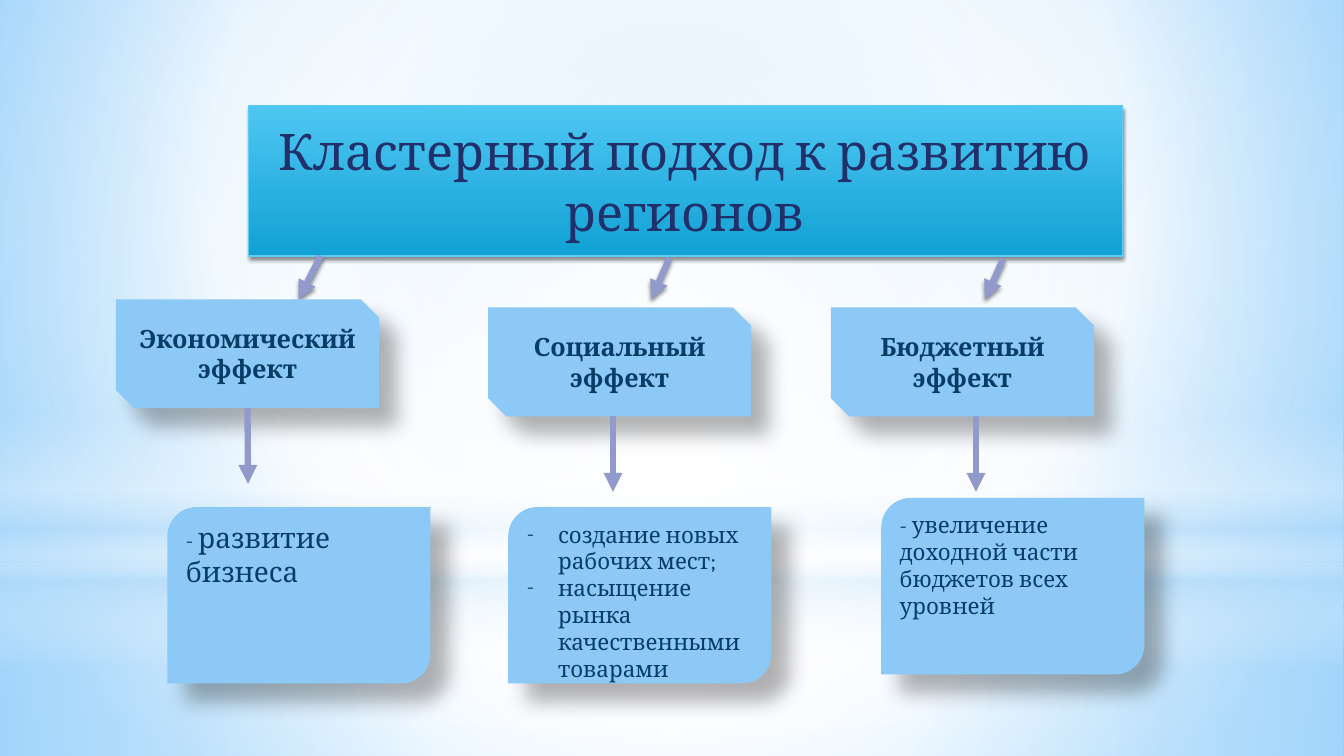
import pptx
import pptx.util
import pptx.dml.color
import pptx.enum.shapes
import pptx.enum.text
import pptx.oxml
import pptx.oxml.ns

Inches = pptx.util.Inches
Pt = pptx.util.Pt
Color = pptx.dml.color.RGBColor
Preset = pptx.enum.shapes.MSO_SHAPE
Align = pptx.enum.text.PP_ALIGN
Anchor = pptx.enum.text.MSO_ANCHOR

NAVY = Color(0x21, 0x30, 0x6A)
INK = Color(0x07, 0x3C, 0x65)
CARD = Color(0x8C, 0xC9, 0xF7)
ARROW = Color(0x91, 0x9A, 0xCA)
EDGE = Color(0x5E, 0xCC, 0xF3)
WHITE = Color(0xFF, 0xFF, 0xFF)
MIST = Color(0xB4, 0xDC, 0xFA)
SKY = Color(0x9E, 0xD5, 0xFF)
AZURE = Color(0x5B, 0xB9, 0xFF)
BANNER_TOP = Color(0x4E, 0xC7, 0xF2)
BANNER_BOTTOM = Color(0x11, 0xA1, 0xD4)

SOFT_SHADOW = (30, 15, 18, 45)
TIGHT_SHADOW = (45, 3.1, 1.8, 90)
CENTER = (50, 50, 50, 50)


def element(markup):
    head, rest = markup.split(" ", 1)
    return pptx.oxml.parse_xml(f"{head} {pptx.oxml.ns.nsdecls('a')} {rest}")


def gradient(stops, focus=None):
    marks = "".join(
        f'<a:gs pos="{place * 1000}"><a:srgbClr val="{color}">'
        f'<a:alpha val="{alpha * 1000}"/></a:srgbClr></a:gs>'
        for place, color, alpha in stops)
    course = '<a:lin ang="5400000" scaled="0"/>'
    if focus:
        sides = " ".join(f'{side}="{share * 1000}"' for side, share in zip("ltrb", focus))
        course = f'<a:path path="circle"><a:fillToRect {sides}/></a:path>'
    return element(f'<a:gradFill rotWithShape="1"><a:gsLst>{marks}</a:gsLst>{course}</a:gradFill>')


def write(para, text, size=16, color=INK, bold=False, font="Cambria"):
    span = para.add_run()
    span.text = text
    span.font.size = Pt(size)
    span.font.name = font
    span.font.bold = bold
    span.font.color.rgb = color


class Board:
    def __init__(self, deck):
        self.page = deck.slides.add_slide(deck.slide_layouts[1])

    def backdrop(self, stops, focus):
        self.page.background.fill.solid()
        solid = self.page.element.xpath("./p:cSld/p:bg/p:bgPr/a:solidFill")[0]
        solid.getparent().replace(solid, gradient(stops, focus))

    def shade(self, box, stops, focus=None):
        box.fill.background()
        blank = box.element.spPr.find(pptx.oxml.ns.qn("a:noFill"))
        box.element.spPr.replace(blank, gradient(stops, focus))

    def shadow(self, item, strength, blur, distance, angle):
        effects = element('<a:effectLst >'
                          f'<a:outerShdw blurRad="{Pt(blur)}" dist="{Pt(distance)}" '
                          f'dir="{angle * 60000}" algn="ctr" rotWithShape="0">'
                          f'<a:srgbClr val="000000"><a:alpha val="{strength * 1000}"/>'
                          '</a:srgbClr></a:outerShdw></a:effectLst>')
        for old in item.element.spPr.findall(pptx.oxml.ns.qn("a:effectLst")):
            item.element.spPr.remove(old)
        item.element.spPr.append(effects)

    def shape(self, preset, frame):
        box = self.page.shapes.add_shape(preset, *map(Inches, frame))
        box.shadow.inherit = False
        box.line.fill.background()
        return box

    def placeholder(self, index, outline, frame):
        box = self.page.placeholders[index]
        box.left, box.top, box.width, box.height = map(Inches, frame)
        box.element.spPr.append(element(f'<a:prstGeom prst="{outline}"><a:avLst/></a:prstGeom>'))
        box.element.getparent().append(box.element)
        box.text_frame.auto_size = pptx.enum.text.MSO_AUTO_SIZE.NONE
        return box

    def glow(self, preset, frame, stops, focus=None):
        self.shade(self.shape(preset, frame), stops, focus)

    def banner(self, frame, text):
        box = self.placeholder(0, "roundRect", frame)
        self.shade(box, [(0, BANNER_TOP, 100), (100, BANNER_BOTTOM, 100)])
        box.line.color.rgb = EDGE
        box.line.width = Pt(0.75)
        self.shadow(box, *TIGHT_SHADOW)
        box.text_frame.vertical_anchor = Anchor.MIDDLE
        para = box.text_frame.paragraphs[0]
        para.alignment = Align.CENTER
        write(para, text, size=36, color=NAVY)

    def card(self, box, anchor):
        box.fill.solid()
        box.fill.fore_color.rgb = CARD
        box.line.fill.background()
        self.shadow(box, *SOFT_SHADOW)
        box.text_frame.word_wrap = True
        box.text_frame.vertical_anchor = anchor

    def effect(self, frame, text):
        box = self.shape(Preset.SNIP_2_DIAG_RECTANGLE, frame)
        self.card(box, Anchor.MIDDLE)
        para = box.text_frame.paragraphs[0]
        para.alignment = Align.CENTER
        write(para, text, size=18, bold=True)
        return box

    def result(self, frame, spans):
        box = self.shape(Preset.ROUND_2_DIAG_RECTANGLE, frame)
        self.card(box, Anchor.TOP)
        para = box.text_frame.paragraphs[0]
        para.alignment = Align.LEFT
        for text, size in spans:
            write(para, text, size=size)

    def result_list(self, frame, items):
        box = self.placeholder(1, "round2DiagRect", frame)
        self.card(box, Anchor.TOP)
        for number, text in enumerate(items):
            para = box.text_frame.add_paragraph() if number else box.text_frame.paragraphs[0]
            para.space_before = Pt(0)
            write(para, text)
            layout = para._p.get_or_add_pPr()
            layout.set("marL", str(Inches(0.31)))
            layout.set("indent", str(-Inches(0.31)))
            layout.append(element('<a:buFont typeface="Cambria"/>'))
            layout.append(element('<a:buChar char="-"/>'))

    def arrow(self, start, end, shadow=None, source=None):
        line = self.page.shapes.add_connector(
            pptx.enum.shapes.MSO_CONNECTOR.STRAIGHT, *map(Inches, start + end))
        if source:
            line.begin_connect(source, 2)
        line.line.color.rgb = ARROW
        line.line.width = Pt(4.5)
        line.line._get_or_add_ln().append(element('<a:tailEnd type="triangle"/>'))
        if shadow:
            self.shadow(line, *shadow)
        else:
            line.element.spPr.append(element("<a:effectLst />"))


def main():
    deck = pptx.Presentation()
    deck.slide_width, deck.slide_height = Inches(13.33), Inches(7.5)
    board = Board(deck)
    board.backdrop([(0, SKY, 100), (60, WHITE, 100), (100, AZURE, 100)], (20, 10, 20, 60))
    board.glow(Preset.RECTANGLE, (0, 5.58, 13.33, 1.92),
               [(0, WHITE, 91), (37, WHITE, 76), (100, MIST, 79)], CENTER)
    board.glow(Preset.RECTANGLE, (0, 0, 13.33, 5.58),
               [(0, WHITE, 89), (48, WHITE, 62), (100, MIST, 79)], CENTER)
    board.glow(Preset.RECTANGLE, (0, 4.12, 13.33, 2.5),
               [(0, WHITE, 0), (29, WHITE, 30), (45, MIST, 40),
                (55, WHITE, 26), (65, MIST, 60), (100, WHITE, 0)])
    board.glow(Preset.OVAL, (0, 1.75, 13.33, 5.58), [(0, WHITE, 100), (56, WHITE, 0)], CENTER)

    board.banner((2.46, 1.05, 8.67, 1.49), "Кластерный подход к развитию регионов")
    for start, end in (((3.18, 2.54), 2.96), ((6.64, 2.56), 6.46), ((9.95, 2.57), 9.77)):
        board.arrow(start, (end, 2.97), TIGHT_SHADOW)

    effects = (("Экономический эффект", 1.15, 2.97, 2.46, True),
               ("Социальный эффект", 4.84, 3.05, 6.08, False),
               ("Бюджетный эффект", 8.24, 3.05, 9.68, False))
    for text, left, top, middle, joined in effects:
        box = board.effect((left, top, 2.61, 1.08), text)
        bottom = top + 1.08
        board.arrow((middle, bottom), (middle, bottom + 0.75), source=box if joined else None)

    board.result((1.66, 5.03, 2.61, 1.75), [("- ", 16), ("развитие бизнеса", 20)])
    board.result_list((5.04, 5.03, 2.61, 1.75),
                      ["создание новых рабочих мест;", "насыщение рынка качественными товарами"])
    board.result((8.74, 4.94, 2.61, 1.75),
                 [("- увеличение доходной части бюджетов всех уровней", 16)])
    deck.save("out.pptx")


if __name__ == "__main__":
    main()
